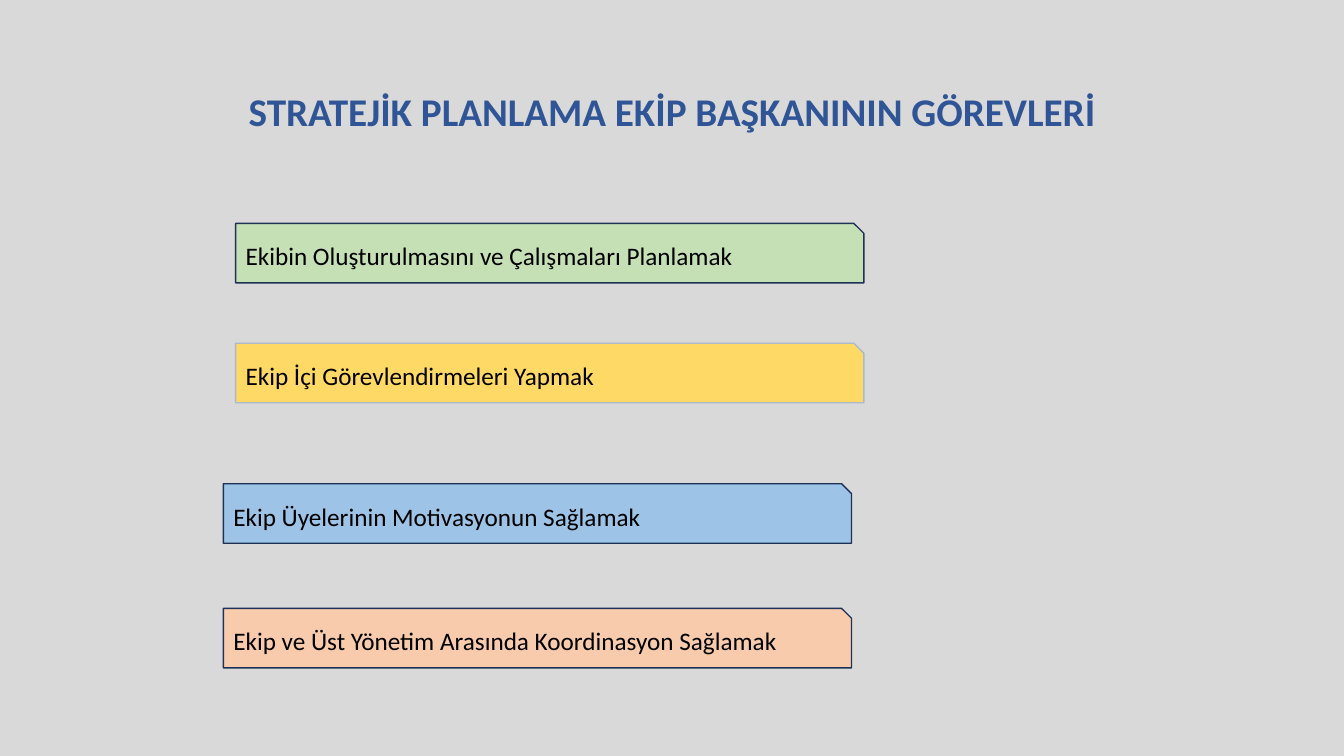
from pptx import Presentation
from pptx.dml.color import RGBColor
from pptx.enum.shapes import MSO_SHAPE
from pptx.enum.text import MSO_ANCHOR, PP_ALIGN
from pptx.util import Cm, Pt

BACKGROUND = RGBColor(0xD9, 0xD9, 0xD9)
TITLE_BLUE = RGBColor(0x2F, 0x55, 0x97)
BLACK = RGBColor(0x00, 0x00, 0x00)
NAVY = RGBColor(0x1E, 0x32, 0x56)
GREY_BLUE = RGBColor(0xAD, 0xB9, 0xCA)
GREEN = RGBColor(0xC5, 0xE0, 0xB4)
YELLOW = RGBColor(0xFF, 0xD9, 0x66)
BLUE = RGBColor(0x9D, 0xC3, 0xE6)
ORANGE = RGBColor(0xF8, 0xCB, 0xAD)

presentation = Presentation()
presentation.slide_width = Cm(33.87)
presentation.slide_height = Cm(19.05)
slide = presentation.slides.add_slide(presentation.slide_layouts[5])
slide.background.fill.solid()
slide.background.fill.fore_color.rgb = BACKGROUND

# Title
title = slide.shapes.title
title.left, title.top, title.width, title.height = Cm(2.33), Cm(1.02), Cm(29.21), Cm(3.68)
title.text_frame.text = "STRATEJİK PLANLAMA EKİP BAŞKANININ GÖREVLERİ"
title.text_frame.vertical_anchor = MSO_ANCHOR.MIDDLE
paragraph = title.text_frame.paragraphs[0]
paragraph.alignment = PP_ALIGN.CENTER
paragraph.line_spacing = 0.9
paragraph.font.name = "Calibri"
paragraph.font.size = Pt(28)
paragraph.font.bold = True
paragraph.font.color.rgb = TITLE_BLUE

# Duties: left, top, fill, outline, text
duties = [
    (5.94, 5.63, GREEN, NAVY, "Ekibin Oluşturulmasını ve Çalışmaları Planlamak"),
    (5.94, 8.65, YELLOW, GREY_BLUE, "Ekip İçi Görevlendirmeleri Yapmak"),
    (5.63, 12.19, BLUE, NAVY, "Ekip Üyelerinin Motivasyonun Sağlamak"),
    (5.63, 15.33, ORANGE, NAVY, "Ekip ve Üst Yönetim Arasında Koordinasyon Sağlamak"),
]
for left, top, fill, outline, text in duties:
    shape = slide.shapes.add_shape(
        MSO_SHAPE.SNIP_1_RECTANGLE, Cm(left), Cm(top), Cm(15.83), Cm(1.5))
    shape.shadow.inherit = False
    shape.fill.solid()
    shape.fill.fore_color.rgb = fill
    shape.line.color.rgb = outline
    shape.line.width = Pt(1)
    shape.text_frame.word_wrap = True
    shape.text_frame.vertical_anchor = MSO_ANCHOR.MIDDLE
    shape.text_frame.text = text
    paragraph = shape.text_frame.paragraphs[0]
    paragraph.alignment = PP_ALIGN.LEFT
    paragraph.font.name = "Calibri"
    paragraph.font.size = Pt(18)
    paragraph.font.color.rgb = BLACK

presentation.save("out.pptx")
